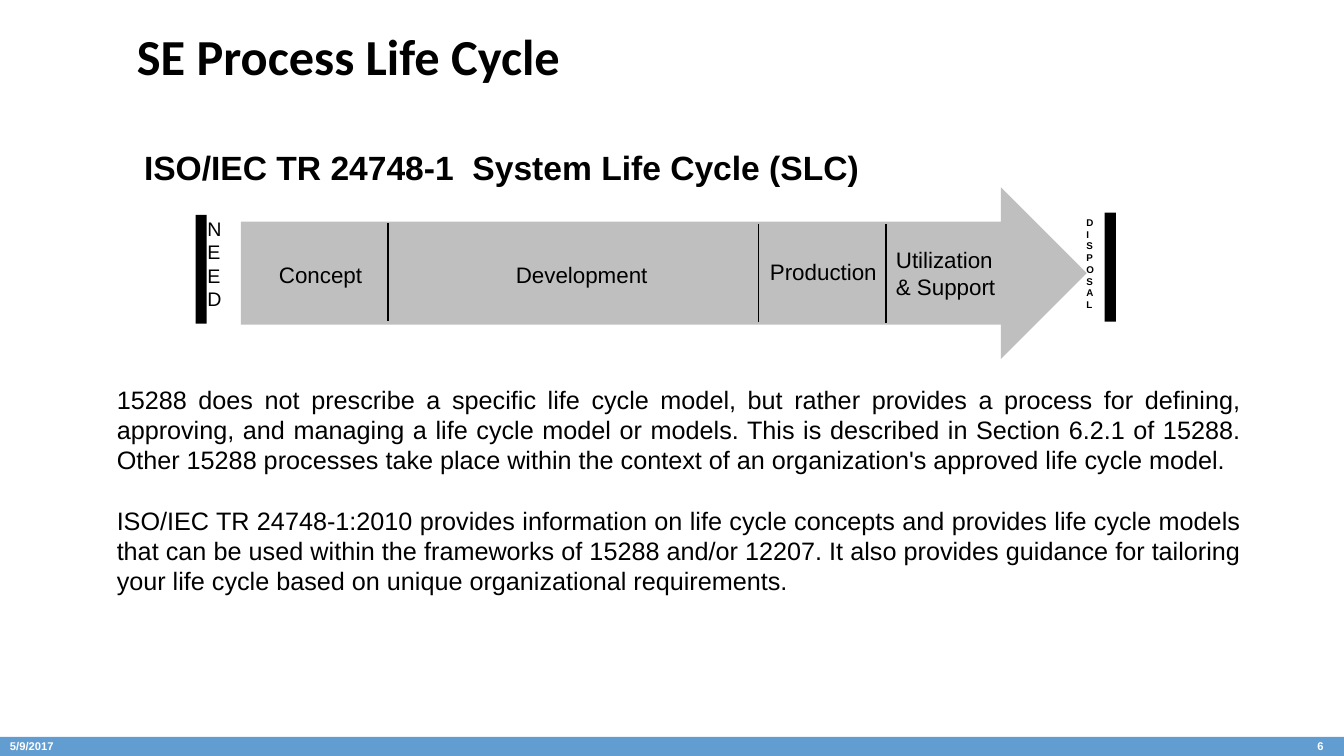
from lxml import etree
from pptx import Presentation
from pptx.dml.color import RGBColor
from pptx.enum.shapes import MSO_CONNECTOR, MSO_SHAPE
from pptx.enum.text import MSO_ANCHOR, PP_ALIGN
from pptx.oxml.ns import qn
from pptx.util import Pt

LEFT, RIGHT, JUSTIFY = PP_ALIGN.LEFT, PP_ALIGN.RIGHT, PP_ALIGN.JUSTIFY
TOP, MIDDLE = MSO_ANCHOR.TOP, MSO_ANCHOR.MIDDLE
RECTANGLE, RIGHT_ARROW = MSO_SHAPE.RECTANGLE, MSO_SHAPE.RIGHT_ARROW
STRAIGHT = MSO_CONNECTOR.STRAIGHT

COLORS = {"black": "000000", "white": "FFFFFF", "arrow": "BFBFBF", "footer": "629DD1"}
SLIDE_WIDTH, SLIDE_HEIGHT = 960, 540
FOOTER_TOP, FOOTER_HEIGHT = 526.3, 13.7
BODY_LINE = 21.6

TITLE = "SE Process Life Cycle"
SUBTITLE = "ISO/IEC TR 24748-1  System Life Cycle (SLC)"
DATE = "5/9/2017"
SLIDE_NUMBER = "6"
BODY = [
    "15288 does not prescribe a specific life cycle model, but rather provides a process for "
    "defining, approving, and managing a life cycle model or models. This is described in "
    "Section 6.2.1 of 15288. Other 15288 processes take place within the context of an "
    "organization's approved life cycle model.",
    "ISO/IEC TR 24748-1:2010 provides information on life cycle concepts and provides life "
    "cycle models that can be used within the frameworks of 15288 and/or 12207. It also "
    "provides guidance for tailoring your life cycle based on unique organizational "
    "requirements.",
]
STAGES = [
    ("Concept", (192.2, 182.9, 75, 26.6)),
    ("Development", (361.4, 182.9, 124, 26.6)),
    ("Production", (542.9, 180.9, 91.5, 26.6)),
    ("Utilization\n& Support", (632.9, 172.1, 86.4, 46)),
]
DIVIDERS = [(277.2, 159.2), (541.6, 159.8), (632.9, 160)]
DIVIDER_LENGTH = 70.4
END_BARS = [(139.7, 153.4), (789.1, 151.9)]
END_LABELS = [
    ("NEED", (141.1, 151.2, 33.1, 80.6), 14, False),
    ("DISPOSAL", (769, 151.2, 23.8, 80.6), 7, True),
]


def add_block(slide, preset, box, color):
    shape = slide.shapes.add_shape(preset, *map(Pt, box))
    shape.shadow.inherit = False
    shape.fill.solid()
    shape.fill.fore_color.rgb = RGBColor.from_string(COLORS[color])
    shape.line.fill.background()
    return shape


def add_text(slide, text, box, size, bold=False, color="black", font="Arial",
             align=LEFT, anchor=TOP, wrap=False):
    shape = slide.shapes.add_textbox(*map(Pt, box))
    frame = shape.text_frame
    frame.word_wrap = wrap
    frame.vertical_anchor = anchor
    frame.text = text
    for paragraph in frame.paragraphs:
        paragraph.alignment = align
        for run in paragraph.runs:
            run.font.name = font
            run.font.size = Pt(size)
            run.font.bold = bold
            run.font.color.rgb = RGBColor.from_string(COLORS[color])
    return shape


def add_divider(slide, x, y):
    line = slide.shapes.add_connector(STRAIGHT, Pt(x), Pt(y), Pt(x), Pt(y + DIVIDER_LENGTH))
    line.line.color.rgb = RGBColor.from_string(COLORS["black"])
    line.line.width = Pt(1)
    etree.SubElement(line.element.spPr, qn("a:effectLst"))


def add_footer(slide):
    add_block(slide, RECTANGLE, (0, FOOTER_TOP, SLIDE_WIDTH, FOOTER_HEIGHT), "footer")
    add_text(slide, DATE, (0, FOOTER_TOP, 106.6, FOOTER_HEIGHT), 8, True, "white",
             anchor=MIDDLE, wrap=True)
    add_text(slide, SLIDE_NUMBER, (686.2, 524.9, 266.4, 16.6), 8, True, "white",
             align=RIGHT, anchor=MIDDLE, wrap=True)


def add_life_cycle(slide):
    arrow = add_block(slide, RIGHT_ARROW, (172.1, 133.9, 604.1, 122.4), "arrow")
    arrow.adjustments[0] = 0.6
    arrow.adjustments[1] = 0.5
    for x, y in DIVIDERS:
        add_divider(slide, x, y)
    for label, box in STAGES:
        add_text(slide, label, box, 16)
    for x, y in END_BARS:
        add_block(slide, RECTANGLE, (x, y, 8, 77.8), "black")
    for label, box, size, bold in END_LABELS:
        shape = add_text(slide, label, box, size, bold)
        shape.element.find(".//" + qn("a:bodyPr")).set("vert", "wordArtVert")


def add_body(slide):
    shape = add_text(slide, "\n".join(BODY), (76.3, 270.7, 817.2, 159.8), 18,
                     align=JUSTIFY, wrap=True)
    for index, paragraph in enumerate(shape.text_frame.paragraphs):
        paragraph.line_spacing = Pt(BODY_LINE)
        if index:
            paragraph.space_before = Pt(BODY_LINE)


def main():
    presentation = Presentation()
    presentation.slide_width = Pt(SLIDE_WIDTH)
    presentation.slide_height = Pt(SLIDE_HEIGHT)
    slide = presentation.slides.add_slide(presentation.slide_layouts[6])
    add_footer(slide)
    add_text(slide, TITLE, (90.7, 14.4, 606.2, 41.8), 36, True, font="Calibri", wrap=True)
    add_text(slide, SUBTITLE, (95.8, 101.5, 537.1, 36), 24, True)
    add_life_cycle(slide)
    add_body(slide)
    presentation.save("out.pptx")


if __name__ == "__main__":
    main()
